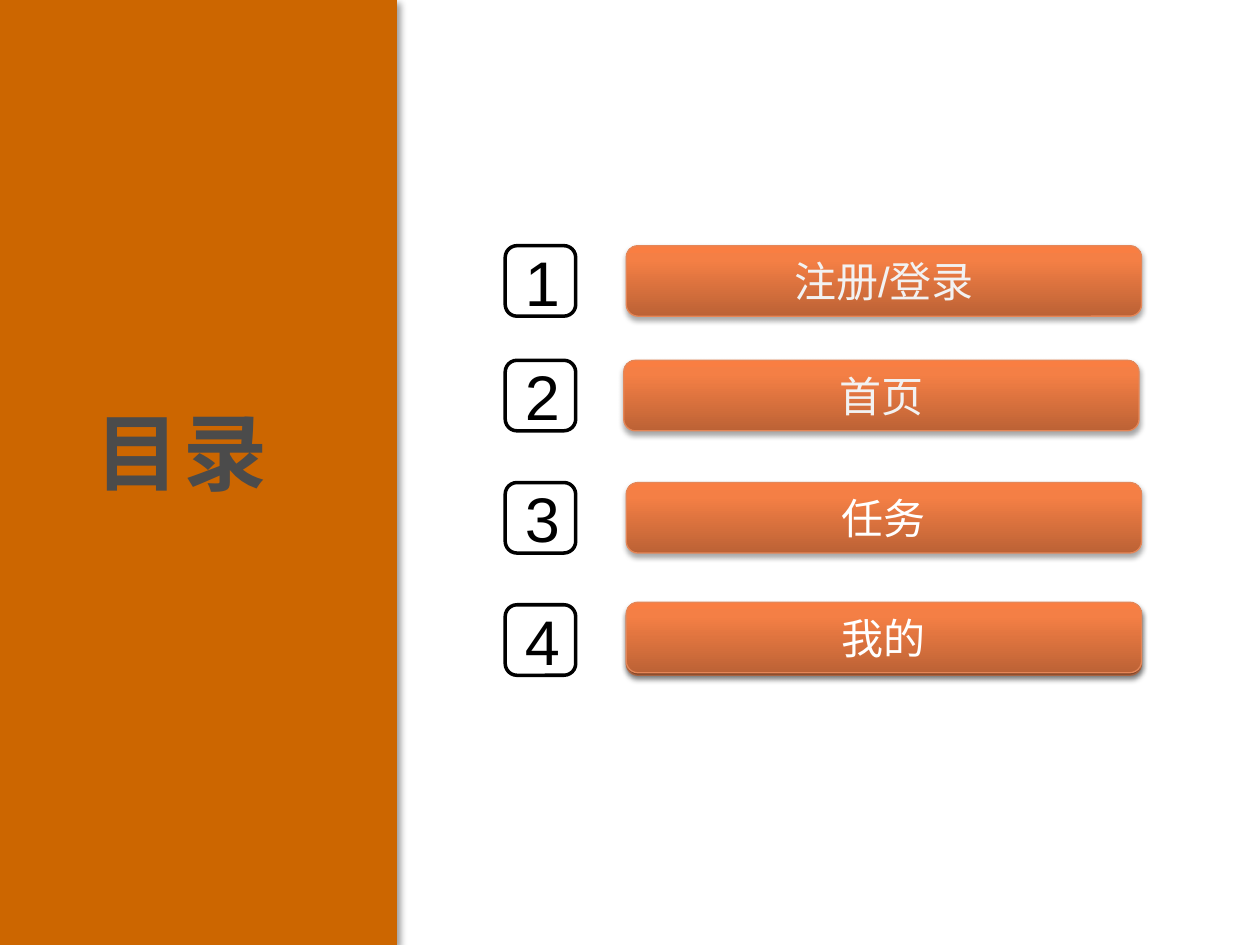
from copy import deepcopy

from lxml import etree
from pptx import Presentation
from pptx.dml.color import RGBColor
from pptx.enum.shapes import MSO_SHAPE
from pptx.enum.text import MSO_ANCHOR, MSO_AUTO_SIZE, PP_ALIGN
from pptx.oxml.ns import qn
from pptx.util import Inches, Pt

RECTANGLE = MSO_SHAPE.RECTANGLE
ROUNDED = MSO_SHAPE.ROUNDED_RECTANGLE
CENTER, RIGHT = PP_ALIGN.CENTER, PP_ALIGN.RIGHT
TOP, MIDDLE = MSO_ANCHOR.TOP, MSO_ANCHOR.MIDDLE
FIT_SHAPE = MSO_AUTO_SIZE.SHAPE_TO_FIT_TEXT
CJK_FONT = "Noto Sans CJK SC"
BUTTON_STOPS = [(0, "BC6235"), (0.8, "F47F45"), (1, "F97E42")]


def rgb(value):
    """Turn a hex string into a colour."""
    return RGBColor.from_string(value)


def write_text(shape, text, size, color, font="Arial", bold=False,
               align=CENTER, anchor=MIDDLE, spacing=0):
    """Put one formatted line of text into a shape."""
    frame = shape.text_frame
    frame.word_wrap = True
    frame.vertical_anchor = anchor
    frame.margin_left = frame.margin_right = Inches(0.13)
    frame.margin_top = frame.margin_bottom = Inches(0.07)
    paragraph = frame.paragraphs[0]
    paragraph.alignment = align
    run = paragraph.add_run()
    run.text = text
    run.font.size = Pt(size)
    run.font.name = font
    run.font.bold = bold
    run.font.color.rgb = rgb(color)
    properties = run.font._element
    etree.SubElement(properties, qn("a:ea"), typeface=CJK_FONT)
    if spacing:
        properties.set("spc", str(spacing * 100))


def add_panel(slide, kind, box, fill=None, line=None, line_width=1):
    """Add a shadowless preset shape with its fill and outline."""
    panel = slide.shapes.add_shape(kind, *map(Inches, box))
    panel.shadow.inherit = False
    if fill:
        panel.fill.solid()
        panel.fill.fore_color.rgb = rgb(fill)
    if line:
        panel.line.color.rgb = rgb(line)
        panel.line.width = Pt(line_width)
    else:
        panel.line.fill.background()
    return panel


def cast_shadow(shape, opacity, blur, distance, angle):
    """Give a shape a black outer shadow."""
    effects = shape._element.spPr.find(qn("a:effectLst"))
    shadow = etree.SubElement(
        effects, qn("a:outerShdw"), blurRad=str(Pt(blur)), dist=str(Pt(distance)),
        dir=str(angle * 60000), algn="ctr", rotWithShape="0")
    black = etree.SubElement(shadow, qn("a:srgbClr"), val="000000")
    etree.SubElement(black, qn("a:alpha"), val=str(opacity * 1000))


def shade_button(button):
    """Fill a button with the orange gradient, dark at the bottom."""
    button.fill.gradient()
    button.fill.gradient_angle = 90
    stop_list = button._element.spPr.find(".//" + qn("a:gsLst"))
    stop_list.append(deepcopy(stop_list[0]))
    for stop, (position, color) in zip(button.fill.gradient_stops, BUTTON_STOPS):
        stop.position = position
        stop.color.rgb = rgb(color)


def add_button(slide, box):
    """Add one shaded orange button."""
    button = add_panel(slide, ROUNDED, box, line="E58657", line_width=0.75)
    shade_button(button)
    cast_shadow(button, 35, 3.1, 1.8, 90)
    return button


def add_sidebar(slide, left, top, width, height):
    """Place the coloured side panel and its heading."""
    sidebar = add_panel(slide, RECTANGLE, (left, top, width, height), fill="CC6600")
    cast_shadow(sidebar, 40, 4, 3, 45)
    heading = slide.shapes.add_textbox(
        Inches(left + 0.35), Inches(top + 3.11), Inches(2.08), Inches(0.94))
    write_text(heading, "目录 ", 48, "4B4B4B", font=CJK_FONT, bold=True,
               align=RIGHT, anchor=TOP, spacing=2)
    heading.text_frame.auto_size = FIT_SHAPE


def add_contents(slide, left, top, width, height):
    """Place the numbered entries, each a number box and its buttons."""
    side, button_width = 0.56, 4.09
    button_left = left + width - button_width
    entries = [
        ("注册/登录", "F2F2F2", 0, [(0, 0)]),
        ("首页", "F2F2F2", 0.91, [(-0.02, 0)]),
        ("任务", "FFFFFF", 1.88, [(0, 0)]),
        ("我的", "FFFFFF", height - side, [(0, 0), (0, -0.02)]),
    ]
    for number, (label, color, drop, offsets) in enumerate(entries, 1):
        row_top = top + drop
        number_box = add_panel(slide, ROUNDED, (left, row_top, side, side),
                               fill="FFFFFF", line="000000", line_width=2)
        write_text(number_box, str(number), 36, "000000")
        for shift_x, shift_y in offsets:
            button = add_button(slide, (button_left + shift_x, row_top + shift_y,
                                        button_width, side))
        write_text(button, label, 24, color)


def main():
    """Build the contents slide and save it."""
    deck = Presentation()
    deck.slide_width, deck.slide_height = Inches(10), Inches(7.5)
    slide = deck.slides.add_slide(deck.slide_layouts[6])
    add_sidebar(slide, 0, 0, 3.15, 7.5)
    add_contents(slide, 4.01, 1.95, 5.05, 3.41)
    deck.save("out.pptx")


if __name__ == "__main__":
    main()
